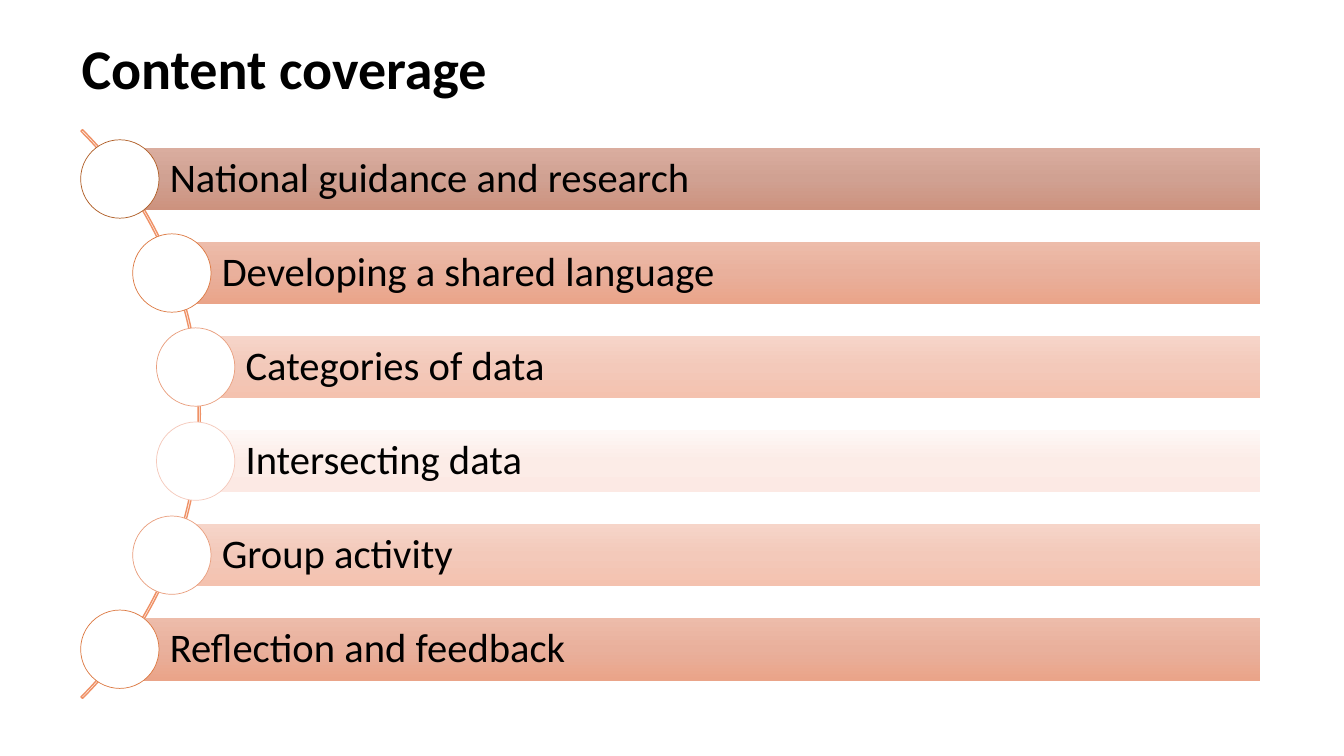
from copy import deepcopy
from math import sqrt

from pptx import Presentation
from pptx.dml.color import RGBColor
from pptx.enum.shapes import MSO_SHAPE
from pptx.enum.text import MSO_ANCHOR, PP_ALIGN
from pptx.util import Cm, Pt

ARC, BAR, CIRCLE = MSO_SHAPE.BLOCK_ARC, MSO_SHAPE.RECTANGLE, MSO_SHAPE.OVAL
MIDDLE, LEFT = MSO_ANCHOR.MIDDLE, PP_ALIGN.LEFT
FONT = "Calibri"
TITLE_ONLY = 5

COLOURS = {"text": "000000", "circle": "FFFFFF", "arc": "EF9166"}
# Each tint: gradient from top to bottom, and the outline of the circle
TINTS = {
    "dark": (("DAAD9F", "D0A192", "CD927E"), "AF5C24"),
    "strong": (("EDBCAA", "E9B09C", "EAA489"), "DC7841"),
    "medium": (("F6D5C9", "F3C9BA", "F4C2AF"), "E99E7D"),
    "pale": (("FEF8F6", "FCECE7", "FCE9E4"), "F5C9BB"),
}
# Topic, tint, and distance in cm from the list's left edge to the bar
TOPICS = [
    ("National guidance and research", "dark", 0.99),
    ("Developing a shared language", "strong", 2.3),
    ("Categories of data", "medium", 2.9),
    ("Intersecting data", "pale", 2.9),
    ("Group activity", "medium", 2.3),
    ("Reflection and feedback", "strong", 0.99),
]
BAR_HEIGHT = 1.58
PITCH = BAR_HEIGHT * 1.5
CIRCLE_SIZE = BAR_HEIGHT * 1.25


def rgb(value):
    return RGBColor.from_string(value)


def add_plain_shape(page, kind, left, top, width, height):
    """Add a shape without shadow, measured in cm."""
    shape = page.shapes.add_shape(kind, Cm(left), Cm(top), Cm(width), Cm(height))
    shape.shadow.inherit = False
    return shape


def set_line(shape, colour, points):
    shape.line.color.rgb = rgb(colour)
    shape.line.width = Pt(points)


def set_gradient(shape, colours):
    """Fill from top to bottom with three evenly spaced colours."""
    shape.fill.gradient()
    shape.fill.gradient_angle = 270
    first = shape.element.spPr.xpath(".//a:gs")[0]
    first.addnext(deepcopy(first))
    for index, (stop, colour) in enumerate(zip(shape.fill.gradient_stops, colours)):
        stop.position = index / 2
        stop.color.rgb = rgb(colour)


def format_text(shape, text, size, bold=False):
    frame = shape.text_frame
    frame.text = text
    frame.word_wrap = True
    frame.vertical_anchor = MIDDLE
    para = frame.paragraphs[0]
    para.alignment = LEFT
    para.line_spacing = 0.9
    para.font.name = FONT
    para.font.size = Pt(size)
    para.font.bold = bold
    para.font.color.rgb = rgb(COLOURS["text"])
    return frame


def add_title(page, left, top, width, height):
    title = page.shapes.title
    title.left, title.top = Cm(left), Cm(top)
    title.width, title.height = Cm(width), Cm(height)
    format_text(title, "Content coverage", 40, bold=True)


def add_arc(page, left, top, height):
    """Draw a quarter circle whose ends are the given height apart."""
    radius = height / sqrt(2)
    arc = add_plain_shape(page, ARC, left - height / 2 - radius,
                          top + height / 2 - radius, radius * 2, radius * 2)
    arc.adjustments[0] = 189
    arc.adjustments[1] = 27
    arc.adjustments[2] = 0.0027
    arc.fill.background()
    set_line(arc, COLOURS["arc"], 1)


def add_topic(page, left, middle, right, text, tint):
    """Add a bar, with a circle centred on its left end."""
    gradient, outline = TINTS[tint]
    bar = add_plain_shape(page, BAR, left, middle - BAR_HEIGHT / 2,
                          right - left, BAR_HEIGHT)
    set_gradient(bar, gradient)
    bar.line.fill.background()
    frame = format_text(bar, text, 29)
    frame.margin_left = Cm(1.26)
    frame.margin_top = frame.margin_right = frame.margin_bottom = Cm(0.2)

    circle = add_plain_shape(page, CIRCLE, left - CIRCLE_SIZE / 2,
                             middle - CIRCLE_SIZE / 2, CIRCLE_SIZE, CIRCLE_SIZE)
    circle.fill.solid()
    circle.fill.fore_color.rgb = rgb(COLOURS["circle"])
    set_line(circle, outline, 0.5)


def add_topic_list(page, left, top, width, height):
    add_arc(page, left + 0.05, top, height)
    first_middle = top + (height - PITCH * (len(TOPICS) - 1)) / 2
    for row, (text, tint, indent) in enumerate(TOPICS):
        add_topic(page, left + indent, first_middle + row * PITCH,
                  left + width, text, tint)


def main():
    deck = Presentation()
    deck.slide_width, deck.slide_height = Cm(33.87), Cm(19.05)
    page = deck.slides.add_slide(deck.slide_layouts[TITLE_ONLY])
    add_title(page, 1.8, 1.1, 14.73, 1.38)
    add_topic_list(page, 2.03, 3.27, 29.72, 14.33)
    deck.save("out.pptx")


if __name__ == "__main__":
    main()
